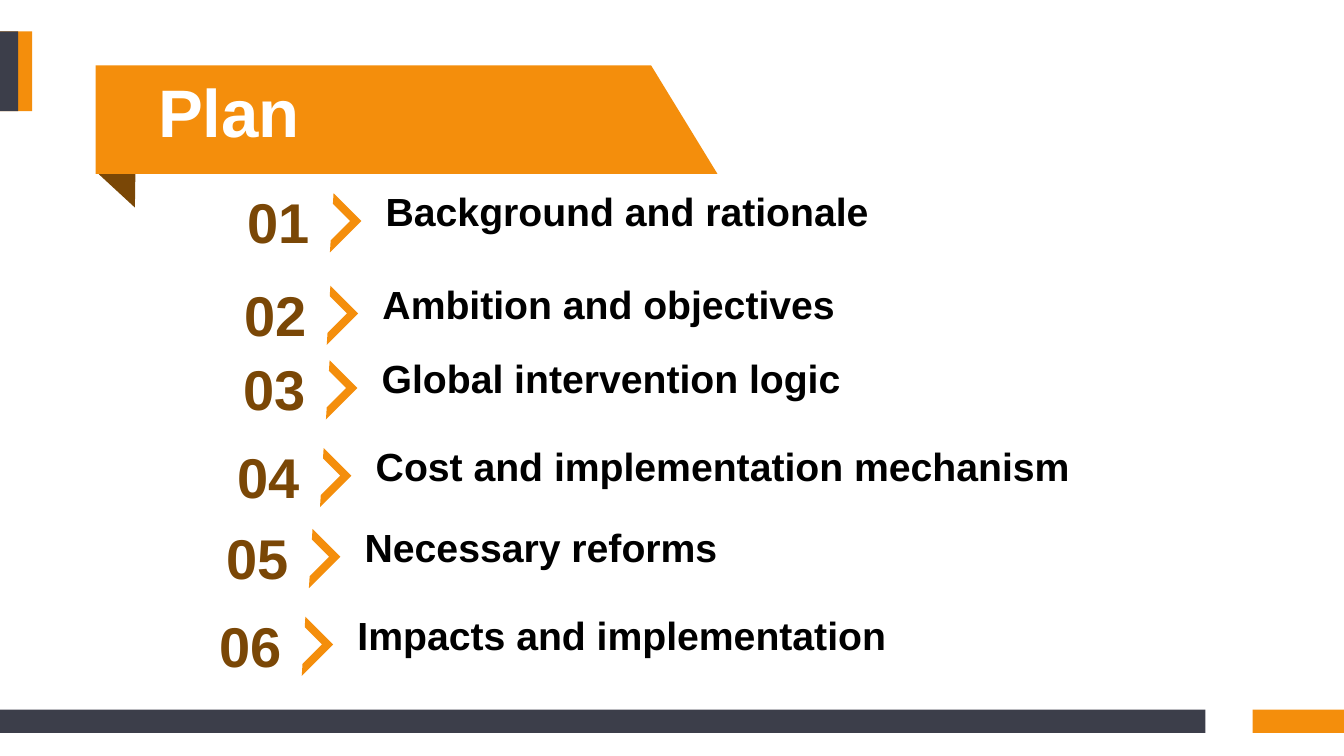
"""Build the plan slide with a folded banner and six numbered items."""
from pptx import Presentation
from pptx.dml.color import RGBColor
from pptx.enum.shapes import MSO_SHAPE
from pptx.enum.text import MSO_ANCHOR, MSO_AUTO_SIZE, PP_ALIGN
from pptx.util import Cm, Pt

ORANGE, BROWN, SLATE = "F48E0C", "7A4706", "3C3E4A"
WHITE, BLACK = "FFFFFF", "000000"

TITLE = "Plan"
TITLE_BOX = (3.73, 1.65, 4.14, 2.31)
ITEMS = [
    ("Background and rationale", 5.69, 4.6),
    ("Ambition and objectives", 5.61, 6.93),
    ("Global intervention logic", 5.59, 8.81),
    ("Cost and implementation mechanism", 5.44, 11.02),
    ("Necessary reforms", 5.16, 13.06),
    ("Impacts and implementation", 4.98, 15.27),
]
BARS = [
    ((0, 0.79, 0.81, 2.01), ORANGE),
    ((0, 0.79, 0.46, 2.01), SLATE),
    ((31.57, 17.88, 2.3, 0.59), ORANGE),
    ((0, 17.88, 30.38, 0.59), SLATE),
]
FOLD = [(3.45, 1.8), (2.44, 1.73), (2.49, 4.39), (3.4, 5.23)]
BANNER = [(2.41, 1.65), (16.41, 1.65), (18.08, 4.38), (2.41, 4.38)]

NUMBER_SIZE = (2.67, 1.96)
LABEL_DX, LABEL_SIZE = 3.73, (20.17, 1.45)
CHEVRON_DX, CHEVRON_DY, CHEVRON_SIZE = 2.11, 0.52, (1.12, 0.99)
CHEVRON_THICKNESS = (0.204, 0.201)
INSETS = {"margin_left": Cm(0.3), "margin_right": Cm(0.3),
          "margin_top": Cm(0.13), "margin_bottom": Cm(0.13)}


def color(value):
    return RGBColor.from_string(value)


def cm(values):
    return [Cm(v) for v in values]


def paint(sp, fill):
    sp.shadow.inherit = False
    sp.fill.solid()
    sp.fill.fore_color.rgb = color(fill)
    sp.line.fill.background()
    return sp


def add_shape(s, kind, box, fill):
    return paint(s.shapes.add_shape(kind, *cm(box)), fill)


def add_polygon(s, points, fill):
    start, *rest = [cm(point) for point in points]
    builder = s.shapes.build_freeform(*start, scale=1.0)
    builder.add_line_segments(rest, close=True)
    return paint(builder.convert_to_shape(), fill)


def write(sp, text, size, fill, align=PP_ALIGN.LEFT):
    tf = sp.text_frame
    frame = {"word_wrap": True, "auto_size": MSO_AUTO_SIZE.NONE,
             "vertical_anchor": MSO_ANCHOR.TOP}
    for name, value in frame.items():
        setattr(tf, name, value)
    p = tf.paragraphs[0]
    p.alignment = align
    r = p.add_run()
    r.text = text
    for name, value in {"name": "Arial", "size": Pt(size), "bold": True}.items():
        setattr(r.font, name, value)
    r.font.color.rgb = color(fill)


def add_text(s, box, *content):
    sp = s.shapes.add_textbox(*cm(box))
    for name, value in INSETS.items():
        setattr(sp.text_frame, name, value)
    write(sp, *content)


def add_item(s, number, text, left, top):
    add_text(s, (left + LABEL_DX, top, *LABEL_SIZE), text, 28, BLACK)
    add_text(s, (left, top, *NUMBER_SIZE), f"{number:02}", 40, BROWN,
             PP_ALIGN.CENTER)
    box = (left + CHEVRON_DX, top + CHEVRON_DY, *CHEVRON_SIZE)
    chevron = add_shape(s, MSO_SHAPE.HALF_FRAME, box, ORANGE)
    chevron.rotation = 135
    for i, value in enumerate(CHEVRON_THICKNESS):
        chevron.adjustments[i] = value


def main():
    prs = Presentation()
    prs.slide_width, prs.slide_height = Cm(33.87), Cm(19.05)
    s = prs.slides.add_slide(prs.slide_layouts[5])
    for box, fill in BARS:
        add_shape(s, MSO_SHAPE.RECTANGLE, box, fill)
    add_polygon(s, FOLD, BROWN)
    banner = add_polygon(s, BANNER, ORANGE)

    title = s.shapes.title
    for name, value in zip(("left", "top", "width", "height"), cm(TITLE_BOX)):
        setattr(title, name, value)
    write(title, TITLE, 48, WHITE)
    banner.element.addnext(title.element)

    for number, item in enumerate(ITEMS, 1):
        add_item(s, number, *item)
    prs.save("out.pptx")


if __name__ == "__main__":
    main()
